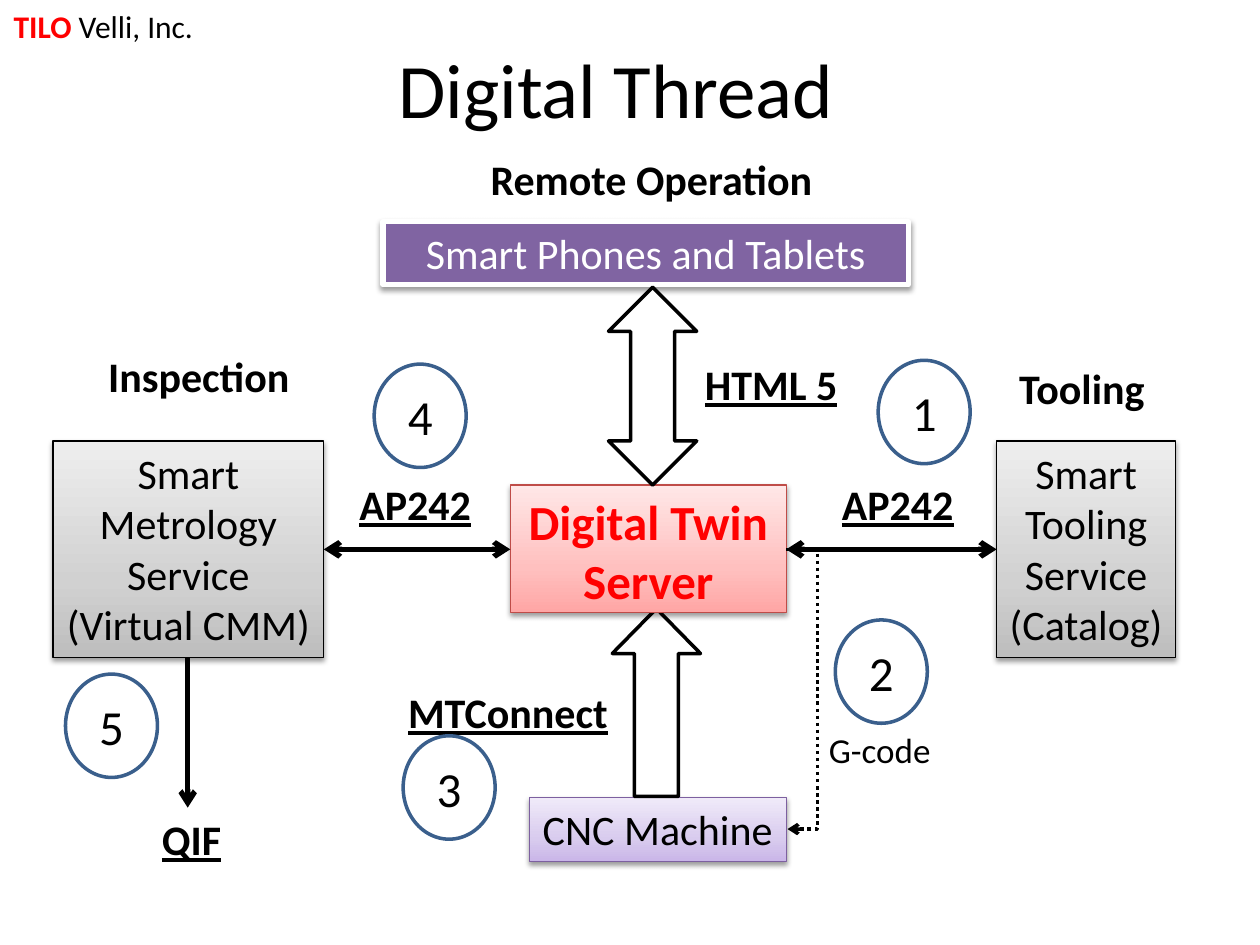
from copy import deepcopy

from lxml.etree import SubElement
from pptx import Presentation
from pptx.dml.color import RGBColor
from pptx.enum.dml import MSO_LINE
from pptx.enum.shapes import MSO_CONNECTOR, MSO_SHAPE
from pptx.enum.text import MSO_ANCHOR, PP_ALIGN
from pptx.oxml.ns import qn
from pptx.util import Inches, Pt

COLORS = {
    "black": "000000", "white": "FFFFFF", "red": "FF0000",
    "purple": "8064A2", "ring": "3A5F8C",
    "red edge": "BF4C48", "violet edge": "7D60A0",
}
# Stops run from the bottom of the box to its top.
GRADES = {
    "gray": ("BDBDBD", "D1D1D1", "EEEEEE"),
    "pink": ("FFA6A5", "FFC0BF", "FFE7E7"),
    "violet": ("C9B5E8", "D8CBEE", "F0EAF9"),
}
STOPS = (0, 0.35, 1)


def tint(name):
    return RGBColor.from_string(COLORS[name])


def write(para, text, size=24, color="black", bold=False, under=False):
    run = para.add_run()
    run.text = text
    font = run.font
    font.name, font.size = "Calibri", Pt(size)
    font.bold, font.underline = bold, under
    font.color.rgb = tint(color)


def grade(fill, name):
    """Fill with a vertical three-stop gradient."""
    fill.gradient()
    fill.gradient_angle = 90
    first = fill.gradient_stops[0]._gs
    first.addnext(deepcopy(first))
    for stop, spot, color in zip(fill.gradient_stops, STOPS, GRADES[name]):
        stop.color.rgb = RGBColor.from_string(color)
        stop.position = spot


def shade(shape):
    """Cast a soft shadow straight down."""
    effects = shape._element.spPr.find(qn("a:effectLst"))
    cast = SubElement(effects, qn("a:outerShdw"), blurRad=str(Pt(3.1)),
                      dist=str(Pt(1.6)), dir="5400000", rotWithShape="0")
    color = SubElement(cast, qn("a:srgbClr"), val=COLORS["black"])
    SubElement(color, qn("a:alpha"), val="38000")


class Deck:
    def __init__(self):
        self.file = Presentation()
        self.file.slide_width, self.file.slide_height = Inches(10), Inches(7.5)
        self.slide = self.file.slides.add_slide(self.file.slide_layouts[6])

    def fit(self, shape, lines, wrap=False, anchor=MSO_ANCHOR.TOP,
            align=PP_ALIGN.CENTER, **style):
        """Set the text; a line may be a list of (text, style) runs."""
        frame = shape.text_frame
        frame.word_wrap, frame.vertical_anchor = wrap, anchor
        for i, line in enumerate(lines):
            para = frame.add_paragraph() if i else frame.paragraphs[0]
            para.alignment = align
            runs = [(line, {})] if isinstance(line, str) else line
            for text, extra in runs:
                write(para, text, **{**style, **extra})

    def label(self, box, line, **style):
        self.fit(self.slide.shapes.add_textbox(*map(Inches, box)),
                 [line], **style)

    def shape(self, kind, box, fill="white", edge="black", width=2):
        shape = self.slide.shapes.add_shape(kind, *map(Inches, box))
        shape.shadow.inherit = False
        if fill in GRADES:
            grade(shape.fill, fill)
        else:
            shape.fill.solid()
            shape.fill.fore_color.rgb = tint(fill)
        shape.line.color.rgb = tint(edge)
        shape.line.width = Pt(width)
        return shape

    def block(self, box, lines, fill="gray", edge="black", width=0.75, **style):
        shape = self.shape(MSO_SHAPE.RECTANGLE, box, fill, edge, width)
        shade(shape)
        self.fit(shape, lines, **style)

    def badge(self, left, top, mark):
        shape = self.shape(MSO_SHAPE.OVAL, (left, top, 0.73, 0.82), edge="ring")
        self.fit(shape, [mark], wrap=True, anchor=MSO_ANCHOR.MIDDLE, size=28)

    def arrow(self, start, end, both=False, width=3, bend=None):
        """Draw an arrow; bend is the elbow's place in parts of its width."""
        kind = MSO_CONNECTOR.ELBOW if bend else MSO_CONNECTOR.STRAIGHT
        link = self.slide.shapes.add_connector(kind, *map(Inches, start + end))
        link.line.color.rgb = tint("black")
        link.line.width = Pt(width)
        props = link._element.spPr
        if bend:
            link.line.dash_style = MSO_LINE.ROUND_DOT
            guides = props.find(qn("a:prstGeom")).get_or_add_avLst()
            SubElement(guides, qn("a:gd"), name="adj1",
                       fmla=f"val {bend * 100000}")
        line = link.line._get_or_add_ln()
        for tag in ("a:headEnd", "a:tailEnd") if both else ("a:tailEnd",):
            SubElement(line, qn(tag), type="arrow")
        SubElement(props, qn("a:effectLst"))


def main():
    deck = Deck()
    left = PP_ALIGN.LEFT
    bold = {"bold": True}
    link = {"bold": True, "under": True}
    mid = 4.36  # height of the row of services

    deck.label((0.01, 0.01, 1.77, 0.4),
               [("TILO", {"color": "red", "bold": True}), (" Velli, Inc.", {})],
               size=18, align=left)
    deck.label((0.39, 0.07, 9, 1.25), "Digital Thread", size=44, wrap=True,
               anchor=MSO_ANCHOR.MIDDLE)

    deck.block((4.2, 6.33, 2.04, 0.51), ["CNC Machine"], "violet", "violet edge")
    feed = deck.shape(MSO_SHAPE.UP_ARROW, (4.86, 4.83, 0.7, 1.49))
    feed.adjustments[1] = 0.51
    deck.block((4.05, 3.85, 2.19, 1.01), ["Digital Twin Server"], "pink",
               "red edge", wrap=True, size=28, color="red", bold=True)

    deck.arrow((4.05, mid), (2.57, mid), both=True)
    deck.block((0.42, 3.5, 2.15, 1.72),
               ["Smart", "Metrology", "Service", "(Virtual CMM)"])
    deck.block((7.91, 3.5, 1.42, 1.72),
               ["Smart", "Tooling", "Service", "(Catalog)"])
    deck.arrow((7.91, mid), (6.24, mid), both=True)
    deck.arrow((6.24, mid), (6.25, 6.58), width=2, bend=25)
    deck.arrow((1.49, 5.22), (1.49, 6.41))

    deck.block((3.04, 1.76, 4.17, 0.5), ["Smart Phones and Tablets"], "purple",
               "white", 3, wrap=True, color="white")
    deck.shape(MSO_SHAPE.UP_DOWN_ARROW, (4.83, 2.28, 0.7, 1.57))

    deck.label((6.48, 5.73, 1.02, 0.44), "G-code", size=20, align=left)
    deck.label((7.99, 2.83, 1.21, 0.5), "Tooling", align=left, **bold)
    deck.label((0.76, 2.73, 1.66, 0.5), "Inspection", align=left, **bold)
    deck.label((3.59, 1.17, 3.16, 0.5), "Remote Operation", wrap=True, **bold)
    deck.label((3.14, 5.4, 1.8, 0.5), "MTConnect", align=left, **link)
    deck.label((1.18, 6.41, 0.68, 0.5), "QIF", **link)
    deck.label((5.49, 2.8, 1.26, 0.5), "HTML 5", **link)
    for x in (2.75, 6.58):
        deck.label((x, 3.75, 1.09, 0.5), "AP242", **link)

    spots = [(6.97, 2.86), (6.63, 4.92), (3.2, 5.84), (2.97, 2.89), (0.52, 5.35)]
    for mark, (x, y) in enumerate(spots, 1):
        deck.badge(x, y, str(mark))

    deck.file.save("out.pptx")


if __name__ == "__main__":
    main()
